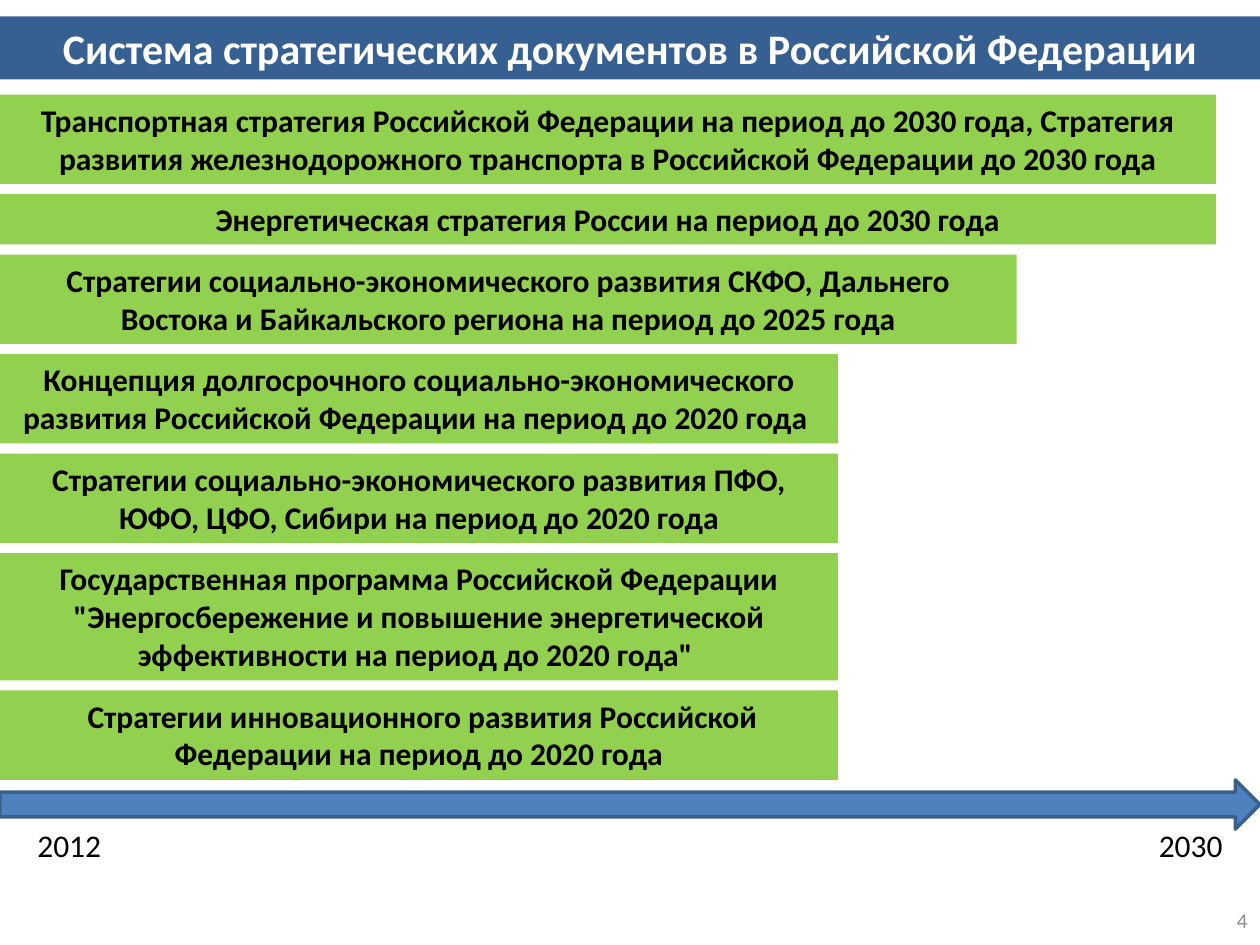
"""Build a slide of strategic documents set along a time arrow."""
from pptx import Presentation
from pptx.dml.color import RGBColor
from pptx.enum.shapes import MSO_SHAPE as Kind
from pptx.enum.text import MSO_ANCHOR as Anchor, MSO_AUTO_SIZE as Auto, PP_ALIGN as Align
from pptx.util import Inches, Pt

COLORS = {
    "title": "376092", "bar": "92D050", "arrow": "4F81BD", "edge": "3A5F8C",
    "white": "FFFFFF", "black": "000000", "gray": "8C8C8C",
}
TOP, GAP = 0.75, 0.08
HEIGHTS = {1: 0.4, 2: 0.71, 3: 1.01}
WIDTHS = {2020: 6.65, 2025: 8.07, 2030: 9.65}
BARS = [
    (2030, 2, "Транспортная стратегия Российской Федерации на период до 2030 года, "
              "Стратегия развития железнодорожного транспорта в Российской Федерации до 2030 года"),
    (2030, 1, "Энергетическая стратегия России на период до 2030 года"),
    (2025, 2, "Стратегии социально-экономического развития СКФО, Дальнего Востока "
              "и Байкальского региона на период до 2025 года"),
    (2020, 2, "Концепция долгосрочного социально-экономического развития "
              "Российской Федерации на период до 2020 года "),
    (2020, 2, "Стратегии социально-экономического развития ПФО, ЮФО, ЦФО, Сибири "
              "на период до 2020 года"),
    (2020, 3, 'Государственная программа Российской Федерации "Энергосбережение '
              'и повышение энергетической эффективности на период до 2020 года" '),
    (2020, 2, " Стратегии инновационного развития Российской Федерации на период до 2020 года"),
]


class Deck:
    """Hold the style and the current slide."""

    def __init__(self, slide, face="Calibri"):
        self.slide = slide
        self.face = face

    def color(self, name):
        return RGBColor.from_string(COLORS[name])

    def paint(self, shape, name):
        shape.fill.solid()
        shape.fill.fore_color.rgb = self.color(name)

    def letter(self, shape, text, size=18, color="black", bold=False,
               align=Align.CENTER, anchor=Anchor.TOP):
        frame = shape.text_frame
        frame.text = text
        frame.word_wrap = True
        frame.auto_size = Auto.NONE
        frame.vertical_anchor = anchor
        line = frame.paragraphs[0]
        line.alignment = align
        font = line.font
        font.name, font.size, font.bold = self.face, Pt(size), bold
        font.color.rgb = self.color(color)

    def title(self, text, x, y, w, h):
        shape = self.slide.shapes.title
        shape.left, shape.top = Inches(x), Inches(y)
        shape.width, shape.height = Inches(w), Inches(h)
        self.paint(shape, "title")
        self.letter(shape, text, 24, "white", True)

    def shape(self, kind, fill, x, y, w, h):
        shape = self.slide.shapes.add_shape(kind, Inches(x), Inches(y), Inches(w), Inches(h))
        shape.shadow.inherit = False
        self.paint(shape, fill)
        return shape

    def bar(self, text, y, w, h):
        shape = self.shape(Kind.RECTANGLE, "bar", 0, y, w, h)
        shape.line.fill.background()
        self.letter(shape, text, bold=True)

    def arrow(self, x, y, w, h):
        shape = self.shape(Kind.RIGHT_ARROW, "arrow", x, y, w, h)
        shape.line.color.rgb = self.color("edge")
        shape.line.width = Pt(2)

    def label(self, text, x, y, w, h, **style):
        box = self.slide.shapes.add_textbox(Inches(x), Inches(y), Inches(w), Inches(h))
        self.letter(box, text, **style)


def main():
    show = Presentation()
    show.slide_width, show.slide_height = Inches(10), Inches(7.5)
    deck = Deck(show.slides.add_slide(show.slide_layouts[5]))

    deck.title("Система стратегических документов в Российской Федерации", 0, 0.13, 10, 0.5)
    deck.arrow(0, 6.19, 10, 0.39)
    for year, x in (("2012", 0), ("2030", 8.9)):
        deck.label(year, x, 6.51, 1.1, 0.4)

    y = TOP
    for year, rows, text in BARS:
        deck.bar(text, y, WIDTHS[year], HEIGHTS[rows])
        y += HEIGHTS[rows] + GAP

    deck.label("4", 7.67, 7.1, 2.33, 0.4, size=12, color="gray",
               align=Align.RIGHT, anchor=Anchor.MIDDLE)
    show.save("out.pptx")


if __name__ == "__main__":
    main()
